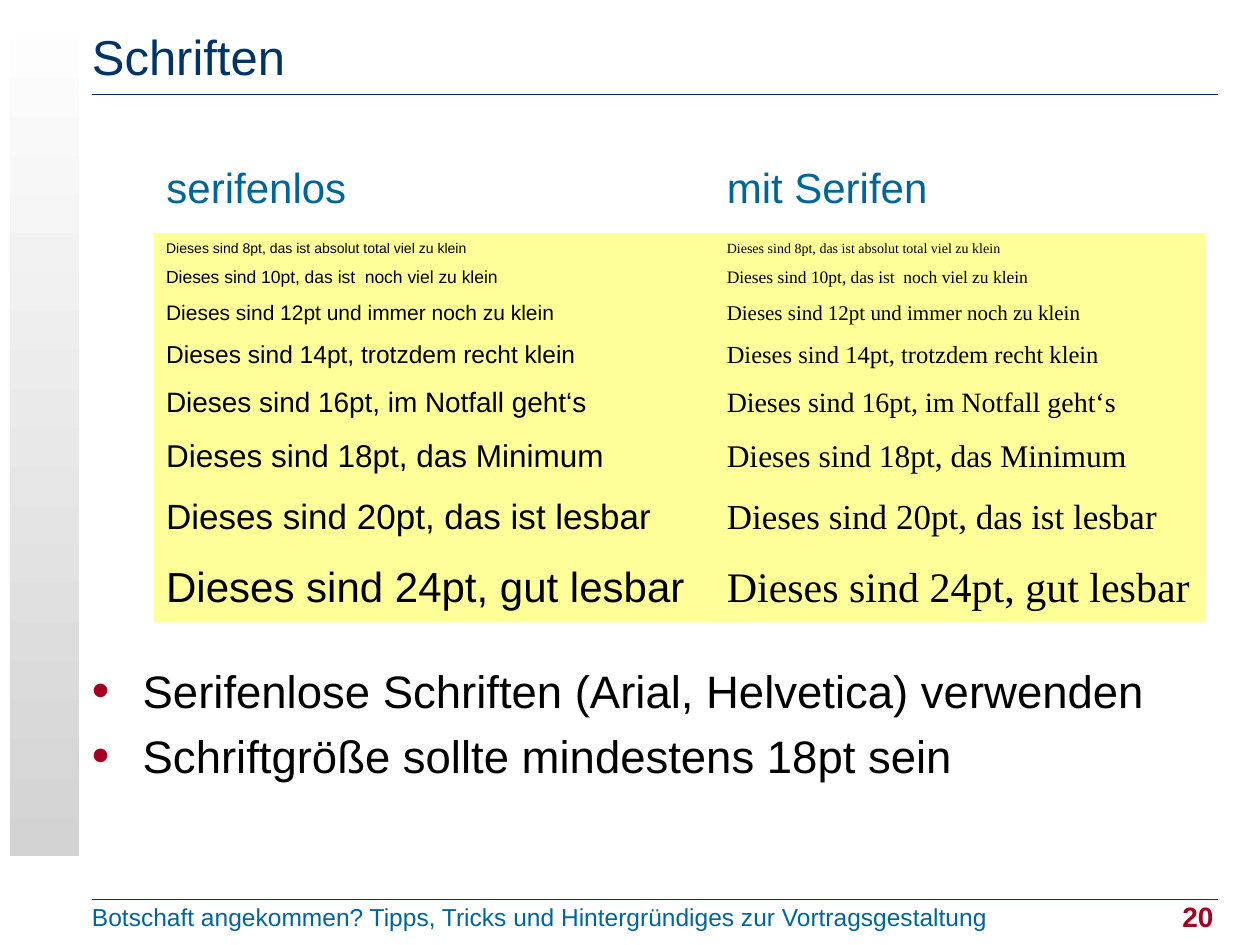
"""Build the slide that compares sans-serif and serif type sizes."""
from lxml.etree import SubElement
from pptx import Presentation
from pptx.dml.color import RGBColor
from pptx.enum.shapes import MSO_CONNECTOR, MSO_SHAPE
from pptx.enum.text import MSO_ANCHOR, PP_ALIGN
from pptx.oxml.ns import qn
from pptx.util import Pt

NAVY = RGBColor(0x00, 0x33, 0x66)
TEAL = RGBColor(0x00, 0x66, 0x99)
RED = RGBColor(0xA5, 0x00, 0x21)
YELLOW = RGBColor(0xFF, 0xFF, 0x99)
GREY = RGBColor(0xD3, 0xD3, 0xD3)
WHITE = RGBColor(0xFF, 0xFF, 0xFF)
BLACK = RGBColor(0x00, 0x00, 0x00)

SANS = "Arial"
SERIF = "Times New Roman"
LEFT, RIGHT = 52.56, 696.24
WIDTH = RIGHT - LEFT
FOOT = 514.08
SAMPLES = [
    (8, "Dieses sind 8pt, das ist absolut total viel zu klein"),
    (10, "Dieses sind 10pt, das ist  noch viel zu klein"),
    (12, "Dieses sind 12pt und immer noch zu klein"),
    (14, "Dieses sind 14pt, trotzdem recht klein"),
    (16, "Dieses sind 16pt, im Notfall geht‘s"),
    (18, "Dieses sind 18pt, das Minimum"),
    (20, "Dieses sind 20pt, das ist lesbar"),
    (24, "Dieses sind 24pt, gut lesbar"),
]
COLUMNS = [
    ("serifenlos", SANS, 87.84, 334.8, 117.36, PP_ALIGN.CENTER),
    ("mit Serifen", SERIF, 408.24, 280.8, 129.6, PP_ALIGN.LEFT),
]
POINTS = [
    "Serifenlose Schriften (Arial, Helvetica) verwenden",
    "Schriftgröße sollte mindestens 18pt sein",
]


def add_run(para, text, size, color, face=SANS, bold=False):
    """Append one styled run to a paragraph."""
    run = para.add_run()
    run.text = text
    font = run.font
    font.name, font.size, font.bold = face, Pt(size), bold
    font.color.rgb = color


def add_box(slide, left, top, width, height, pad=0):
    """Add a text box with equal side insets and return its frame."""
    box = slide.shapes.add_textbox(Pt(left), Pt(top), Pt(width), Pt(height))
    frame = box.text_frame
    frame.word_wrap = True
    frame.margin_left = frame.margin_right = Pt(pad)
    frame.margin_top = frame.margin_bottom = Pt(pad / 2)
    return frame


def add_rect(slide, left, top, width, height):
    """Add a rectangle without outline or shadow."""
    rect = slide.shapes.add_shape(
        MSO_SHAPE.RECTANGLE, Pt(left), Pt(top), Pt(width), Pt(height))
    rect.shadow.inherit = False
    rect.line.fill.background()
    return rect


def add_rule(slide, top):
    """Draw a thin line across the content width."""
    rule = slide.shapes.add_connector(
        MSO_CONNECTOR.STRAIGHT, Pt(RIGHT), Pt(top), Pt(LEFT), Pt(top))
    rule.line.color.rgb = NAVY
    rule.line.width = Pt(0.75)
    SubElement(rule.line._get_or_add_ln().getparent(), qn("a:effectLst"))


def add_band(slide):
    """Draw the fading band at the left edge."""
    fill = add_rect(slide, 5.76, 0, 39.6, 488.88).fill
    fill.gradient()
    fill.gradient_angle = 90
    for stop, color in zip(fill.gradient_stops, (GREY, WHITE)):
        stop.color.rgb = color


def add_samples(slide, face, left, width):
    """Add a yellow panel with one line for each type size."""
    panel = add_rect(slide, left, 133.2, width, 222.48)
    panel.fill.solid()
    panel.fill.fore_color.rgb = YELLOW
    frame = panel.text_frame
    frame.word_wrap = True
    frame.vertical_anchor = MSO_ANCHOR.TOP
    for row, (size, text) in enumerate(SAMPLES):
        para = frame.add_paragraph() if row else frame.paragraphs[0]
        para.alignment = PP_ALIGN.LEFT
        para.space_before = Pt(round(size * 0.58, 1) if row else 0)
        add_run(para, text, size, BLACK, face)


def add_head(slide, text, left, width, align):
    """Add the heading above a panel."""
    frame = add_box(slide, left, 88.56, width, 36, 7.2)
    frame.word_wrap = False
    para = frame.paragraphs[0]
    para.alignment = align
    add_run(para, text, 24, TEAL)


def add_list(slide):
    """Add the bulleted advice."""
    frame = add_box(slide, LEFT, 378.72, WIDTH, 126)
    for row, text in enumerate(POINTS):
        para = frame.add_paragraph() if row else frame.paragraphs[0]
        para.space_before = Pt(6 if row else 0)
        props = para._p.get_or_add_pPr()
        props.set("marL", str(Pt(29)))
        props.set("indent", str(-Pt(29)))
        color = SubElement(props, qn("a:buClr"))
        SubElement(color, qn("a:srgbClr"), val=str(RED))
        SubElement(props, qn("a:buSzPct"), val="110000")
        SubElement(props, qn("a:buFont"), typeface=SANS)
        SubElement(props, qn("a:buChar"), char="•")
        add_run(para, text, 26, BLACK)


def add_foot(slide):
    """Add the talk name and the page number."""
    name = add_box(slide, LEFT, FOOT, 536.4, 19.44)
    page = add_box(slide, 658.08, FOOT, 35.28, 19.44)
    for frame in (name, page):
        frame.vertical_anchor = MSO_ANCHOR.MIDDLE
    add_run(name.paragraphs[0], "Botschaft angekommen? Tipps, Tricks und "
            "Hintergründiges zur Vortragsgestaltung", 14, TEAL)
    page.paragraphs[0].alignment = PP_ALIGN.RIGHT
    add_run(page.paragraphs[0], "20", 16, RED, bold=True)


def main():
    """Build and save the slide."""
    deck = Presentation()
    deck.slide_width, deck.slide_height = Pt(720), Pt(540)
    slide = deck.slides.add_slide(deck.slide_layouts[6])
    add_rule(slide, 54)
    add_rule(slide, FOOT)
    add_band(slide)
    title = add_box(slide, LEFT, 20.88, WIDTH, 28.08).paragraphs[0]
    title.line_spacing = Pt(28)
    add_run(title, "Schriften", 28, NAVY)
    add_list(slide)
    add_foot(slide)
    for text, face, left, width, span, align in COLUMNS:
        add_samples(slide, face, left, width)
        add_head(slide, text, left, span, align)
    deck.save("out.pptx")


if __name__ == "__main__":
    main()
